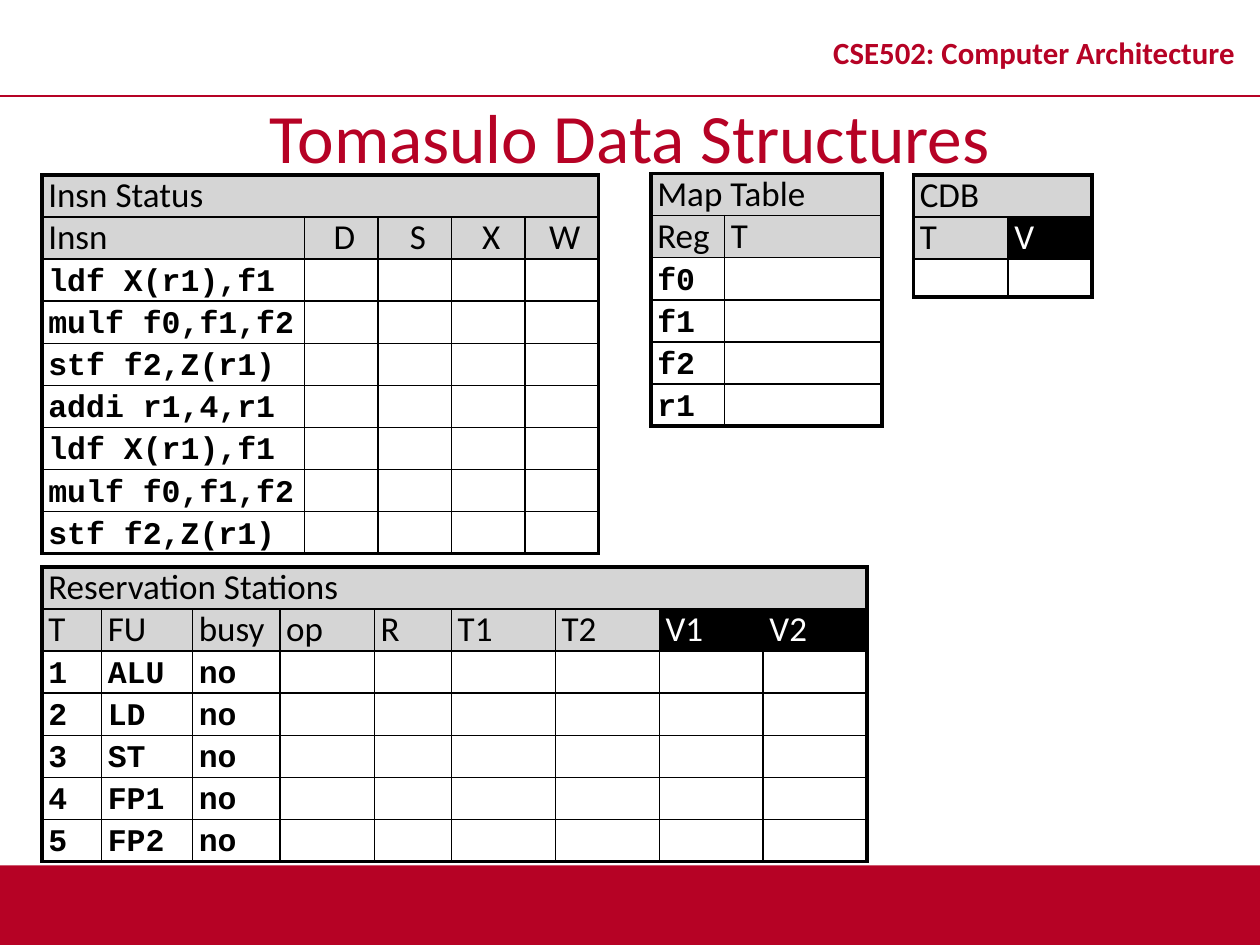
from lxml import etree
from pptx import Presentation
from pptx.dml.color import RGBColor
from pptx.enum.shapes import MSO_CONNECTOR, MSO_SHAPE
from pptx.enum.text import MSO_ANCHOR, PP_ALIGN
from pptx.oxml.ns import qn
from pptx.util import Pt

LEFT, CENTER = PP_ALIGN.LEFT, PP_ALIGN.CENTER
MIDDLE = MSO_ANCHOR.MIDDLE
RECTANGLE = MSO_SHAPE.RECTANGLE
STRAIGHT = MSO_CONNECTOR.STRAIGHT

WIDTH, HEIGHT = 720, 540
RED, BLACK, WHITE, GRAY = "B60225", "000000", "FFFFFF", "D5D5D5"
SANS, MONO = "Calibri", "Courier New"
ROW_HEIGHT = 24
THIN, THICK = 1, 2.25

INSTRUCTIONS = [
    "ldf X(r1),f1", "mulf f0,f1,f2", "stf f2,Z(r1)", "addi r1,4,r1",
    "ldf X(r1),f1", "mulf f0,f1,f2", "stf f2,Z(r1)",
]
REGISTERS = ["f0", "f1", "f2", "r1"]
UNITS = ["ALU", "LD", "ST", "FP1", "FP2"]


def color(value):
    """Turn a hex string into a colour."""
    return RGBColor.from_string(value)


def write(text_frame, text, size=20, font=SANS, fill=BLACK, bold=False,
          align=LEFT, spacing=None):
    """Put one formatted paragraph into a text frame."""
    paragraph = text_frame.paragraphs[0]
    paragraph.alignment = align
    if spacing:
        paragraph.line_spacing = spacing
    if text:
        run = paragraph.add_run()
        run.text = text
        run.font.size = Pt(size)
        run.font.name = font
        run.font.bold = bold
        run.font.color.rgb = color(fill)


def add_label(slide, box, text, **text_format):
    """Add a vertically centred text box."""
    shape = slide.shapes.add_textbox(*map(Pt, box))
    shape.text_frame.word_wrap = True
    shape.text_frame.vertical_anchor = MIDDLE
    write(shape.text_frame, text, fill=RED, align=CENTER, **text_format)


def add_header(slide, box):
    """Add the course name and the rule below it."""
    left, top, width, height = box
    bottom = top + height
    rule = slide.shapes.add_connector(
        STRAIGHT, Pt(left), Pt(bottom), Pt(left + width), Pt(bottom))
    rule.line.color.rgb = color(RED)
    rule.line.width = Pt(1)
    etree.SubElement(rule._element.spPr, qn("a:effectLst"))
    name_width = 258
    add_label(slide, (left + width - name_width, top + 9.4, name_width, height - 9.4),
              "CSE502: Computer Architecture", size=17.6, bold=True, spacing=0.8)


def add_footer(slide, box):
    """Add the solid band at the foot of the slide."""
    band = slide.shapes.add_shape(RECTANGLE, *map(Pt, box))
    band.shadow.inherit = False
    band.fill.solid()
    band.fill.fore_color.rgb = color(RED)
    band.line.fill.background()


def set_borders(cell, widths):
    """Draw the left, right, top and bottom borders of a cell."""
    properties = cell._tc.get_or_add_tcPr()
    for side, width in zip("LRTB", widths):
        line = etree.SubElement(properties, qn(f"a:ln{side}"), w=str(Pt(width)))
        solid = etree.SubElement(line, qn("a:solidFill"))
        etree.SubElement(solid, qn("a:srgbClr"), val=BLACK)


def add_structure(slide, box, title, columns, headings, records,
                  centered=(), dark=(), last_height=ROW_HEIGHT):
    """Add a framed table with a title row, a heading row and records."""
    left, top = box
    rows = [[title] + [""] * (len(columns) - 1), headings] + records
    last_row, last_column = len(rows) - 1, len(columns) - 1
    height = ROW_HEIGHT * last_row + last_height
    table = slide.shapes.add_table(
        len(rows), len(columns), Pt(left), Pt(top), Pt(sum(columns)), Pt(height)).table
    table.first_row = table.horz_banding = False
    for column, width in zip(table.columns, columns):
        column.width = Pt(width)
    for row in table.rows:
        row.height = Pt(ROW_HEIGHT)
    table.rows[last_row].height = Pt(last_height)
    table.cell(0, 0).merge(table.cell(0, last_column))

    for r, texts in enumerate(rows):
        for c, text in enumerate(texts):
            cell = table.cell(r, c)
            set_borders(cell, [THICK if edge else THIN for edge in (
                c == 0, r == 0 or c == last_column, r == 0, r == last_row)])
            cell.margin_left = Pt(3.6)
            cell.margin_right = cell.margin_top = cell.margin_bottom = 0
            is_dark = r == 1 and text in dark
            if r < 2:
                cell.fill.solid()
                cell.fill.fore_color.rgb = color(BLACK if is_dark else GRAY)
                text_format = {"fill": WHITE if is_dark else BLACK}
            else:
                cell.fill.background()
                text_format = {"size": 18, "font": MONO, "bold": True}
            write(cell.text_frame, text, align=CENTER if text in centered else LEFT,
                  spacing=Pt(ROW_HEIGHT if text else 18), **text_format)


def add_data_structures(slide, box):
    """Place the four tables of the algorithm."""
    left, top = box
    stages = ["D", "S", "X", "W"]
    add_structure(slide, (left, top), "Insn Status", [150] + [42] * 4,
                  ["Insn"] + stages, [[text] + [""] * 4 for text in INSTRUCTIONS],
                  centered=stages)
    add_structure(slide, (left + 348, top - 0.8), "Map Table", [42, 90],
                  ["Reg", "T"], [[register, ""] for register in REGISTERS])
    add_structure(slide, (left, top + 224), "Reservation Stations",
                  [34, 52, 50, 54, 44] + [59.4] * 4,
                  ["T", "FU", "busy", "op", "R", "T1", "T2", "V1", "V2"],
                  [[str(number), unit, "no"] + [""] * 6
                   for number, unit in enumerate(UNITS, 1)],
                  dark=("V1", "V2"))
    add_structure(slide, (left + 498, top), "CDB", [54, 48], ["T", "V"], [["", ""]],
                  dark=("V",), last_height=20)


def main():
    """Build and save the slide."""
    presentation = Presentation()
    presentation.slide_width, presentation.slide_height = Pt(WIDTH), Pt(HEIGHT)
    slide = presentation.slides.add_slide(presentation.slide_layouts[6])
    add_footer(slide, (0, 494.6, WIDTH, 45.4))
    add_header(slide, (0, 0, WIDTH, 54.7))
    add_label(slide, (0, 54.7, WIDTH, 45.4), "Tomasulo Data Structures", size=39.6)
    add_data_structures(slide, (24, 100))
    presentation.save("out.pptx")


if __name__ == "__main__":
    main()
